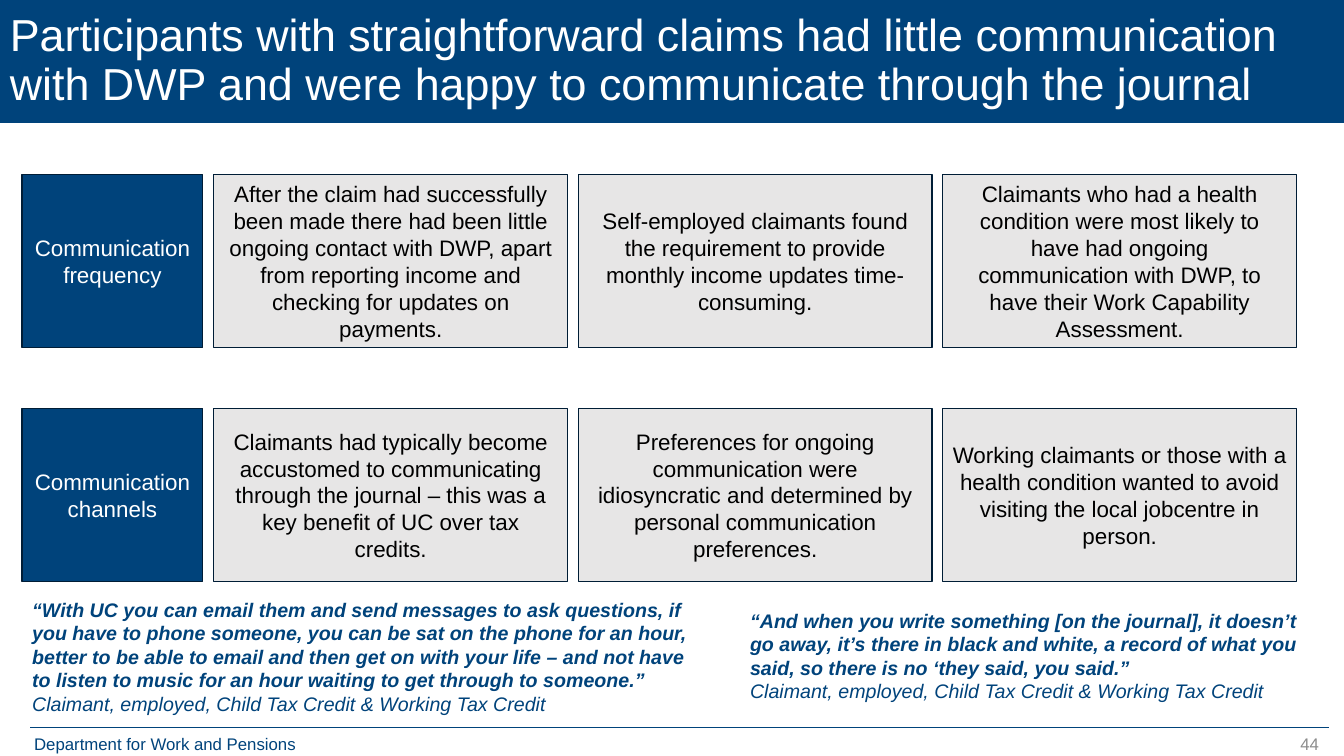
from dataclasses import dataclass

from lxml import etree
from pptx import Presentation
from pptx import util as u
from pptx.dml.color import RGBColor
from pptx.enum import shapes, text
from pptx.oxml import ns


@dataclass
class Theme:
    font: str = "Arial"
    navy: str = "00437B"
    edge: str = "001D36"
    pale: str = "E7E6E6"
    white: str = "FFFFFF"
    black: str = "000000"
    gray: str = "8C8C8C"
    title: int = 32
    body: int = 16
    quote: int = 14
    foot: int = 12


theme = Theme()
align = text.PP_ALIGN
deck = Presentation()
deck.slide_width, deck.slide_height = u.Inches(13.33), u.Inches(7.5)
slide = deck.slides.add_slide(deck.slide_layouts[6])


def write(para, words, size, color, side=align.LEFT, bold=False, slant=False):
    para.alignment = side
    run = para.add_run()
    run.text = words
    run.font.name = theme.font
    run.font.size = u.Pt(size)
    run.font.bold = bold
    run.font.italic = slant
    run.font.color.rgb = RGBColor.from_string(color)


def block(left, top, width, height, fill=None, edge=None):
    area = [u.Inches(n) for n in (left, top, width, height)]
    if fill:
        shape = slide.shapes.add_shape(shapes.MSO_SHAPE.RECTANGLE, *area)
        shape.shadow.inherit = False
        shape.fill.solid()
        shape.fill.fore_color.rgb = RGBColor.from_string(fill)
        shape.line.fill.background()
        shape.text_frame.vertical_anchor = text.MSO_ANCHOR.MIDDLE
    else:
        shape = slide.shapes.add_textbox(*area)
    if edge:
        shape.line.color.rgb = RGBColor.from_string(edge)
        shape.line.width = u.Pt(1)
    shape.text_frame.word_wrap = True
    return shape.text_frame


foot = block(0.24, 7.23, 3.23, 0.3)
write(foot.paragraphs[0], "Department for Work and Pensions", theme.foot, theme.navy, align.JUSTIFY)
page = block(10.18, 7.23, 3, 0.4)
write(page.paragraphs[0], "44", theme.foot, theme.gray, align.RIGHT)

rule = slide.shapes.add_connector(
    shapes.MSO_CONNECTOR.STRAIGHT,
    u.Inches(0.3), u.Inches(7.22), u.Inches(13.18), u.Inches(7.22))
rule.line.color.rgb = RGBColor.from_string(theme.navy)
rule.line.width = u.Pt(0.5)
etree.SubElement(rule._element.spPr, ns.qn("a:effectLst"))

title = block(0, 0, 13.33, 1.22, theme.navy)
title.paragraphs[0].line_spacing = 0.9
write(title.paragraphs[0],
      "Participants with straightforward claims had little communication "
      "with DWP and were happy to communicate through the journal",
      theme.title, theme.white)

rows = [
    ("Communication frequency", [
        "After the claim had successfully been made there had been little ongoing contact "
        "with DWP, apart from reporting income and checking for updates on payments.",
        "Self-employed claimants found the requirement to provide monthly income updates "
        "time-consuming.",
        "Claimants who had a health condition were most likely to have had ongoing "
        "communication with DWP, to have their Work Capability Assessment."]),
    ("Communication channels", [
        "Claimants had typically become accustomed to communicating through the journal – "
        "this was a key benefit of UC over tax credits.",
        "Preferences for ongoing communication were idiosyncratic and determined by "
        "personal communication preferences.",
        "Working claimants or those with a health condition wanted to avoid visiting the "
        "local jobcentre in person."]),
]
for row, (label, cells) in enumerate(rows):
    top = 1.73 + row * 2.32
    head = block(0.22, top, 1.79, 1.72, theme.navy, theme.edge)
    write(head.paragraphs[0], label, theme.body, theme.white, align.CENTER)
    for col, words in enumerate(cells):
        cell = block(2.12 + col * 3.615, top, 3.51, 1.72, theme.pale, theme.edge)
        write(cell.paragraphs[0], words, theme.body, theme.black, align.CENTER)

quotes = [
    (0.22, 5.88, 1.28, 0,
     "“With UC you can email them and send messages to ask questions, if you have to phone "
     "someone, you can be sat on the phone for an hour, better to be able to email and then "
     "get on with your life – and not have to listen to music for an hour waiting to get "
     "through to someone.”"),
    (6.34, 5.99, 1.51, 1,
     "“And when you write something [on the journal], it doesn’t go away, it’s there in "
     "black and white, a record of what you said, so there is no ‘they said, you said.”"),
]
source = "Claimant, employed, Child Tax Credit & Working Tax Credit"
for left, top, height, indent, words in quotes:
    frame = block(left, top, 6.78, height)
    paras = [frame.paragraphs[0], frame.add_paragraph()]
    for para, line, bold in zip(paras, (words, source), (True, False)):
        para.level = indent * 2
        para._p.get_or_add_pPr().set("marL", str(u.Inches(indent)))
        write(para, line, theme.quote, theme.navy, bold=bold, slant=True)

deck.save("out.pptx")
